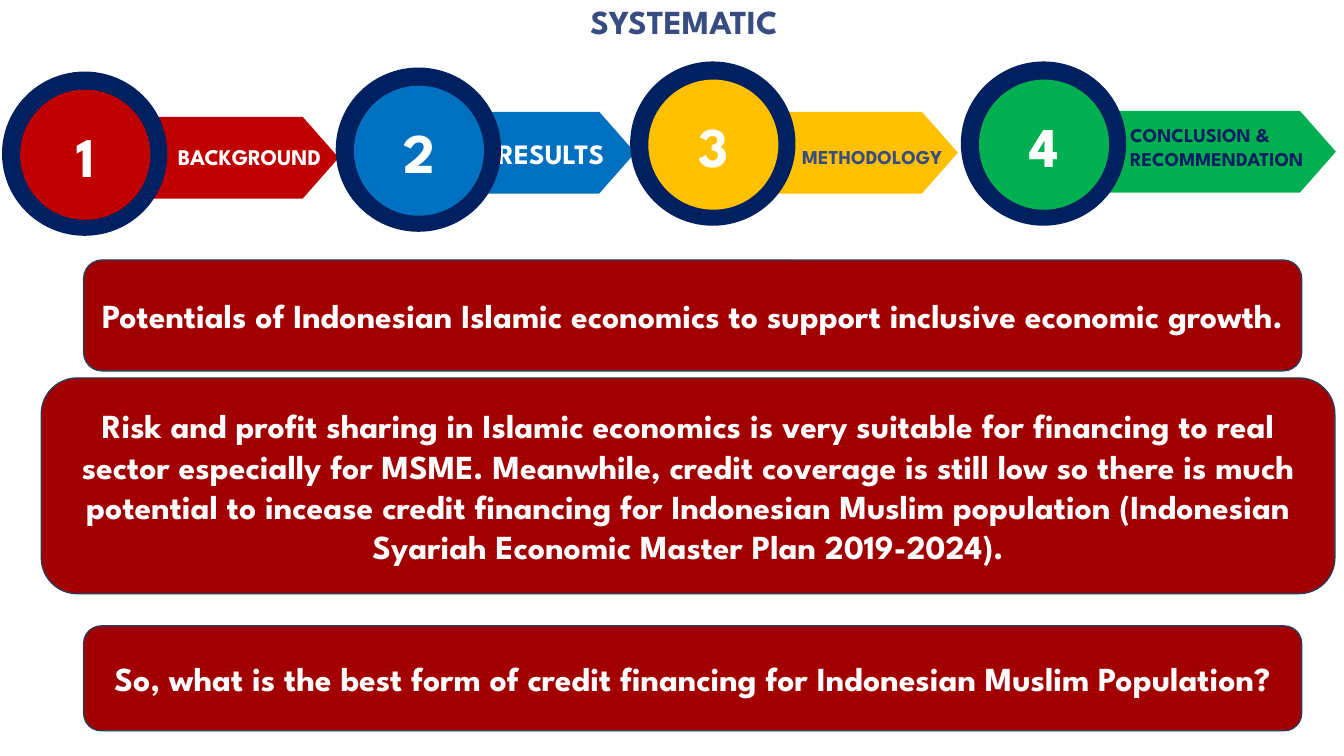
import pptx
import pptx.util
import pptx.dml.color
import pptx.enum.shapes
import pptx.enum.text

SHAPE = pptx.enum.shapes.MSO_SHAPE
ALIGN = pptx.enum.text.PP_ALIGN
ANCHOR = pptx.enum.text.MSO_ANCHOR
AUTO = pptx.enum.text.MSO_AUTO_SIZE
inch = pptx.util.Inches

COLORS = {
    "navy": "002060", "slate": "374C81", "edge": "303A58", "white": "FFFFFF",
    "panel": "A20000", "red": "C00000", "blue": "0070C0",
    "yellow": "FFC000", "green": "00B050",
}
RING_W, RING_H, DISC, DISC_INSET = 1.64, 1.63, 1.29, 0.18
ARROW_H = 0.81

# ring left, top; arrow offset x, y and width; label offset x, y, width, height;
# label text, size, colour, alignment; step colour
STEPS = [
    ((0.02, 0.71), (1.51, 0.45, 1.83), (1.54, 0.66, 1.83, 0.37),
     ("BACKGROUND", 16, "white", ALIGN.CENTER), "red"),
    ((3.33, 0.67), (1.39, 0.44, 1.58), (1.5, 0.64, 1.27, 0.44),
     ("RESULTS", 20, "white", ALIGN.CENTER), "blue"),
    ((6.25, 0.61), (1.43, 0.5, 1.82), (1.49, 0.78, 1.82, 0.34),
     ("METHODOLOGY", 14, "slate", ALIGN.CENTER), "yellow"),
    ((9.53, 0.61), (1.36, 0.49, 2.36), (1.58, 0.56, 2.14, 0.57),
     ("CONCLUSION & RECOMMENDATION", 14, "navy", ALIGN.LEFT), "green"),
]

PANELS = [
    ((0.83, 2.58, 12.08, 1.1),
     "Potentials of Indonesian Islamic economics to support inclusive economic growth."),
    ((0.41, 3.75, 12.83, 2.14),
     "Risk and profit sharing in Islamic economics is very suitable for financing to real "
     "sector especially for MSME. Meanwhile, credit coverage is still low so there is much "
     "potential to incease credit financing for Indonesian Muslim population (Indonesian "
     "Syariah Economic Master Plan 2019-2024)."),
    ((0.83, 6.21, 12.08, 1.04),
     "So, what is the best form of credit financing for Indonesian Muslim Population?"),
]


def rgb(name):
    return pptx.dml.color.RGBColor.from_string(COLORS[name])


def set_all(target, values):
    for key, value in values.items():
        setattr(target, key, value)


def write(holder, text, size, color, align=ALIGN.CENTER, **frame_values):
    frame = holder.text_frame
    frame.text = text
    set_all(frame, {"word_wrap": True, **frame_values})
    paragraph = frame.paragraphs[0]
    paragraph.alignment = align
    font = paragraph.runs[0].font
    set_all(font, {"name": "League Spartan", "size": pptx.util.Pt(size), "bold": True})
    font.color.rgb = rgb(color)
    return paragraph


def add_filled(slide, kind, box, fill, edge=None):
    shape = slide.shapes.add_shape(kind, *map(inch, box))
    shape.shadow.inherit = False
    shape.fill.solid()
    shape.fill.fore_color.rgb = rgb(fill)
    if edge:
        shape.line.color.rgb = rgb(edge)
        shape.line.width = pptx.util.Pt(1)
    else:
        shape.line.fill.background()
    return shape


def place_title(slide, box):
    title = slide.shapes.title
    set_all(title, dict(zip(("left", "top", "width", "height"), map(inch, box))))
    paragraph = write(title, "SYSTEMATIC", 24, "slate",
                      vertical_anchor=ANCHOR.BOTTOM, auto_size=AUTO.NONE,
                      margin_left=inch(0.13), margin_right=inch(0.13),
                      margin_top=inch(0.07), margin_bottom=inch(0.07))
    set_all(paragraph, {"line_spacing": 0.85, "space_before": pptx.util.Pt(0)})


def add_step(slide, number, origin, arrow_box, label_box, label, color):
    left, top = origin
    # Arrow and its label
    dx, dy, width = arrow_box
    arrow = add_filled(slide, SHAPE.PENTAGON, (left + dx, top + dy, width, ARROW_H), color)
    arrow.adjustments[0] = 0.44
    dx, dy, width, height = label_box
    caption = slide.shapes.add_textbox(*map(inch, (left + dx, top + dy, width, height)))
    write(caption, *label, auto_size=AUTO.SHAPE_TO_FIT_TEXT)
    # Numbered ring
    add_filled(slide, SHAPE.OVAL, (left, top, RING_W, RING_H), "navy")
    disc = add_filled(slide, SHAPE.OVAL,
                      (left + DISC_INSET, top + DISC_INSET, DISC, DISC), color)
    write(disc, str(number), 40, "white", vertical_anchor=ANCHOR.MIDDLE)


def add_panel(slide, box, text):
    panel = add_filled(slide, SHAPE.ROUNDED_RECTANGLE, box, "panel", "edge")
    write(panel, text, 24, "white", vertical_anchor=ANCHOR.MIDDLE)


def main():
    deck = pptx.Presentation()
    set_all(deck, {"slide_width": inch(13.33), "slide_height": inch(7.5)})
    slide = deck.slides.add_slide(deck.slide_layouts[5])
    place_title(slide, (0.24, -0.06, 13.09, 0.54))
    for number, step in enumerate(STEPS, 1):
        add_step(slide, number, *step)
    for box, text in PANELS:
        add_panel(slide, box, text)
    deck.save("out.pptx")


if __name__ == "__main__":
    main()
